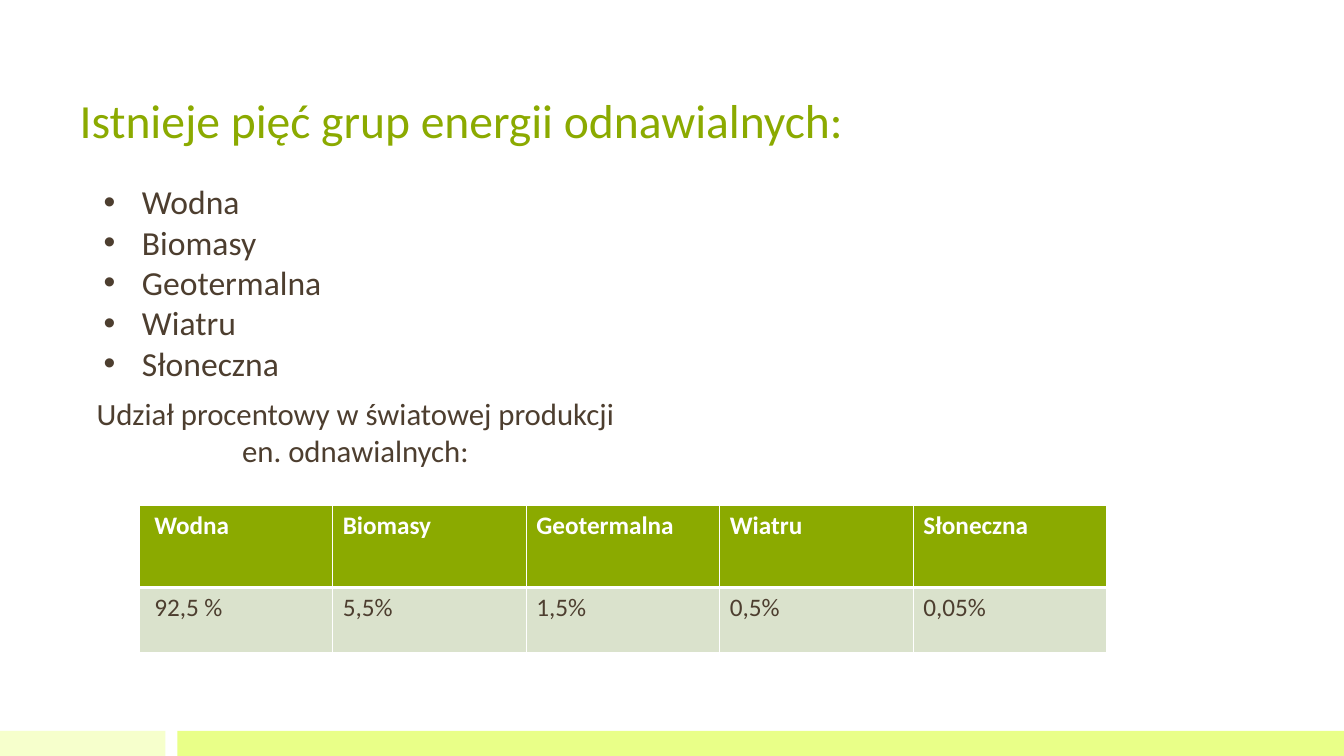
from lxml import etree
from pptx import Presentation
from pptx.dml.color import RGBColor
from pptx.enum.shapes import MSO_SHAPE
from pptx.enum.text import MSO_ANCHOR, MSO_AUTO_SIZE, PP_ALIGN
from pptx.oxml.ns import qn
from pptx.util import Emu, Pt

RECT = MSO_SHAPE.RECTANGLE
BOTTOM = MSO_ANCHOR.BOTTOM
NO_FIT = MSO_AUTO_SIZE.NONE
LEFT, CENTER = PP_ALIGN.LEFT, PP_ALIGN.CENTER

GREEN = RGBColor(0x8B, 0xAA, 0x00)
BROWN = RGBColor(0x4D, 0x3E, 0x2F)
WHITE = RGBColor(0xFF, 0xFF, 0xFF)
PALE_LIME = RGBColor(0xF6, 0xFF, 0xCC)
LIME = RGBColor(0xE9, 0xFF, 0x88)
SAGE = RGBColor(0xDA, 0xE2, 0xCC)

PX = 9144  # EMU per px, 100 px to the inch


def px(*lengths):
    return [Emu(n * PX) for n in lengths]


class SlideBuilder:
    font = "Calibri"

    def __init__(self, prs):
        self.slide = prs.slides.add_slide(prs.slide_layouts[5])

    def style(self, tf, size, color, bold=False, align=LEFT):
        for p in tf.paragraphs:
            p.alignment = align
            for r in p.runs:
                r.font.name = self.font
                r.font.size = Pt(size)
                r.font.bold = bold
                r.font.color.rgb = color

    def bar(self, box, color):
        sp = self.slide.shapes.add_shape(RECT, *px(*box))
        sp.shadow.inherit = False
        sp.fill.solid()
        sp.fill.fore_color.rgb = color
        sp.line.fill.background()

    def title(self, box, text, size, color):
        sp = self.slide.shapes.title
        sp.left, sp.top, sp.width, sp.height = px(*box)
        tf = sp.text_frame
        tf.text = text
        tf.auto_size = NO_FIT
        tf.vertical_anchor = BOTTOM
        self.style(tf, size, color)

    def text(self, box, text, size, color, align=LEFT):
        tf = self.slide.shapes.add_textbox(*px(*box)).text_frame
        tf.word_wrap = True
        tf.text = text
        self.style(tf, size, color, align=align)
        return tf

    def bullets(self, box, items, size, color, indent):
        tf = self.text(box, "\n".join(items), size, color)
        for p in tf.paragraphs:
            pPr = p._p.get_or_add_pPr()
            pPr.set("marL", str(indent * PX))
            pPr.set("indent", str(-indent * PX))
            etree.SubElement(pPr, qn("a:buFont"), typeface="Arial")
            etree.SubElement(pPr, qn("a:buChar"), char="•")

    def border(self, cell, widths, color):
        tcPr = cell._tc.get_or_add_tcPr()
        for side, width in zip("LRTB", widths):
            ln = etree.SubElement(tcPr, qn(f"a:ln{side}"), w=str(Pt(width)))
            fill = etree.SubElement(ln, qn("a:solidFill"))
            etree.SubElement(fill, qn("a:srgbClr"), val=str(color))

    def table(self, box, rows, heights, styles, size, first_margin):
        shape = self.slide.shapes.add_table(len(rows), len(rows[0]), *px(*box))
        table = shape.table
        for row, height in zip(table.rows, px(*heights)):
            row.height = height
        for i, (values, look) in enumerate(zip(rows, styles)):
            fill, color, bold, borders = look
            for j, value in enumerate(values):
                cell = table.cell(i, j)
                cell.text = value
                self.style(cell.text_frame, size, color, bold)
                self.border(cell, borders, WHITE)
                cell.fill.solid()
                cell.fill.fore_color.rgb = fill
                if j == 0:
                    cell.margin_left = px(first_margin)[0]


def main():
    prs = Presentation()
    prs.slide_width, prs.slide_height = px(1333, 750)
    s = SlideBuilder(prs)
    sources = ["Wodna", "Biomasy", "Geotermalna", "Wiatru", "Słoneczna"]
    shares = ["92,5 %", "5,5%", "1,5%", "0,5%", "0,05%"]

    # Footer bars
    s.bar((0, 725, 164, 25), PALE_LIME)
    s.bar((176, 725, 1157, 25), LIME)

    # Title
    s.title((69, 23, 1025, 129), "Istnieje pięć grup energii odnawialnych:", 34, GREEN)

    # Table of shares: fill, text colour, bold, borders left/right/top/bottom
    header = (GREEN, WHITE, True, (1, 1, 1, 3))
    body = (SAGE, BROWN, False, (1, 1, 3, 1))
    s.table((138, 501, 960, 146), [sources, shares], (82, 64), (header, body), 18, 15)

    # List of sources and table caption
    s.bullets((93, 175, 621, 212), sources, 24, BROWN, 38)
    s.text((69, 387, 567, 84),
           "Udział procentowy w światowej produkcji en. odnawialnych:",
           22, BROWN, CENTER)

    prs.save("out.pptx")


if __name__ == "__main__":
    main()
